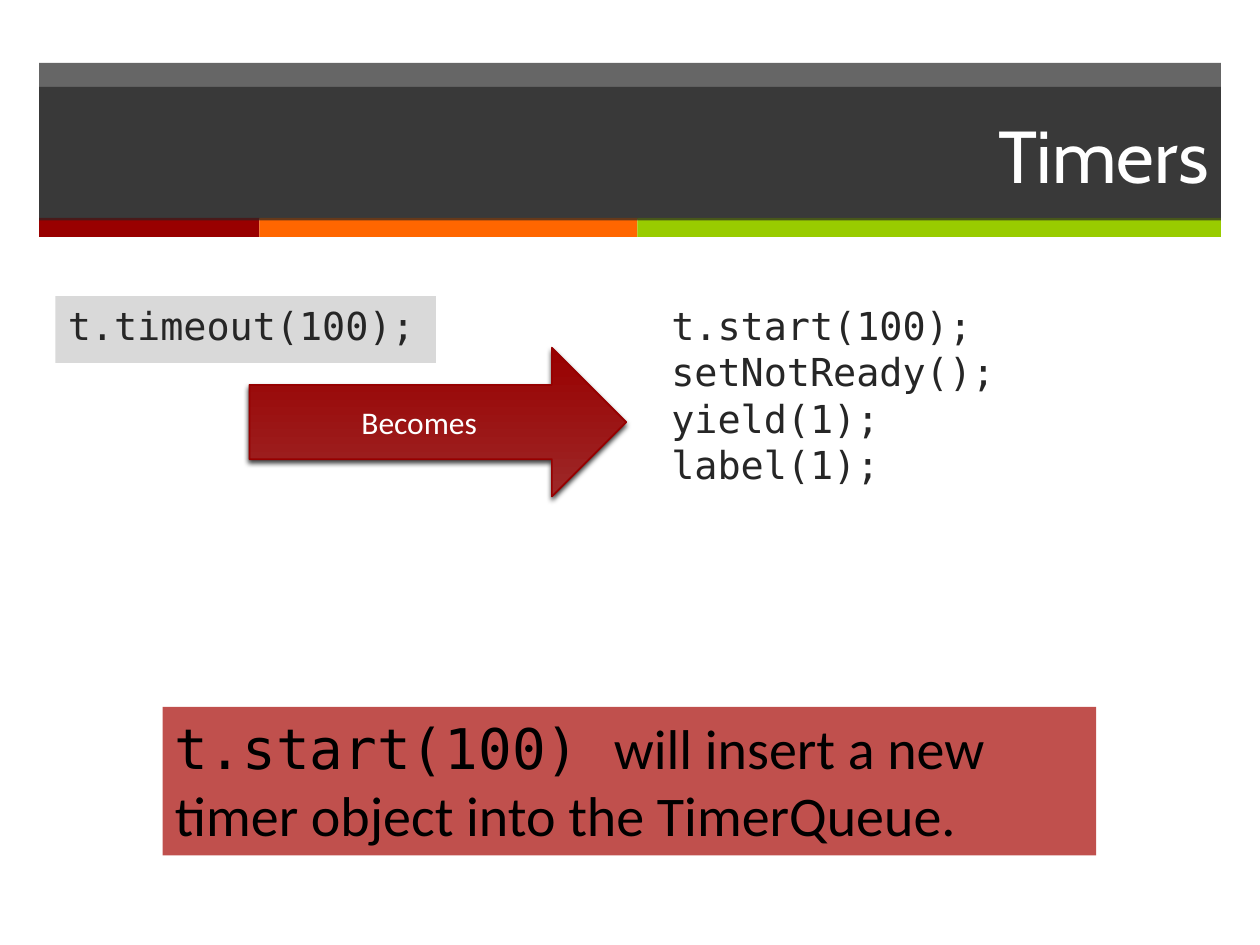
import pptx
import pptx.dml.color
import pptx.enum.shapes
import pptx.enum.text
import pptx.oxml
import pptx.oxml.ns
import pptx.util
from pptx.util import Inches

SHAPE = pptx.enum.shapes.MSO_SHAPE
ALIGN = pptx.enum.text.PP_ALIGN
ANCHOR = pptx.enum.text.MSO_ANCHOR


def color(code):
    return pptx.dml.color.RGBColor.from_string(code)


class Deck:
    sans = "Calibri"
    mono = "DejaVu Sans Mono"
    head = "Cabin"
    dark = "262626"
    white = "FFFFFF"

    def __init__(self, slide):
        self.slide = slide

    def box(self, left, top, width, height, fill=None, alpha=None,
            kind=SHAPE.RECTANGLE):
        shape = self.slide.shapes.add_shape(
            kind, Inches(left), Inches(top), Inches(width), Inches(height))
        shape.shadow.inherit = False
        shape.line.fill.background()
        if fill:
            shape.fill.solid()
            shape.fill.fore_color.rgb = color(fill)
        else:
            shape.fill.background()
        if alpha:
            props = shape._element.spPr
            node = props.find(".//" + pptx.oxml.ns.qn("a:srgbClr"))
            node.append(pptx.oxml.parse_xml(
                f'<a:alpha {pptx.oxml.ns.nsdecls("a")} val="{alpha * 1000}"/>'))
        return shape

    def label(self, shape, parts, size, ink, align=ALIGN.LEFT,
              anchor=ANCHOR.TOP):
        """Fill one paragraph with (text, font) parts; \\v breaks a line."""
        frame = shape.text_frame
        frame.word_wrap = True
        frame.vertical_anchor = anchor
        para = frame.paragraphs[0]
        para.alignment = align
        for text, font in parts:
            start = len(para.runs)
            if start:
                para.add_run().text = text
            else:
                para.text = text
            for run in para.runs[start:]:
                run.font.name = font
                run.font.size = pptx.util.Pt(size)
                run.font.color.rgb = color(ink)

    def arrow(self, left, top, width, height, text):
        shape = self.box(left, top, width, height, kind=SHAPE.RIGHT_ARROW)
        shape.fill.gradient()
        shape.fill.gradient_angle = 90
        for stop, code in zip(shape.fill.gradient_stops, ("9D2828", "990000")):
            stop.color.rgb = color(code)
        shape.line.color.rgb = color("960000")
        shape.line.width = pptx.util.Pt(1)
        effects = shape._element.spPr.find(pptx.oxml.ns.qn("a:effectLst"))
        effects.append(pptx.oxml.parse_xml(
            f'<a:outerShdw {pptx.oxml.ns.nsdecls("a")} blurRad="38100" '
            'dist="25400" dir="6600000" rotWithShape="0">'
            '<a:srgbClr val="000000"><a:alpha val="75000"/></a:srgbClr>'
            '</a:outerShdw>'))
        self.label(shape, [(text, self.sans)], 18, self.white,
                   ALIGN.CENTER, ANCHOR.MIDDLE)

    def banner(self, title):
        left, width = 0.31, 9.38
        self.box(left, 0.5, width, 1.24, self.dark, 70)
        edge = left
        for span, fill in ((1.75, "990000"), (3, "FF6600"), (4.63, "99CC00")):
            self.box(edge, 1.73, span, 0.15, fill)
            edge += span
        bar = self.box(left, 0.69, width, 1.06, self.dark, 70)
        self.label(bar, [(title, self.head)], 42, self.white,
                   ALIGN.RIGHT, ANCHOR.MIDDLE)

    def code(self, left, top, width, height, lines, fill=None):
        shape = self.box(left, top, width, height, fill)
        self.label(shape, [("\v".join(lines), self.mono)], 22, self.dark)

    def note(self, left, top, width, height, parts):
        shape = self.box(left, top, width, height, "C0504D")
        self.label(shape, parts, 32, "000000")


def main():
    show = pptx.Presentation()
    show.slide_width, show.slide_height = Inches(10), Inches(7.5)
    deck = Deck(show.slides.add_slide(show.slide_layouts[6]))
    deck.banner("Timers")
    deck.code(0.44, 2.35, 3.02, 0.53, ["t.timeout(100);"], "D9D9D9")
    deck.code(5.23, 2.35, 4.3, 2.37,
              ["t.start(100);", "setNotReady();", "yield(1);", "label(1);"])
    deck.arrow(1.98, 2.76, 2.99, 1.18, "Becomes")
    deck.note(1.29, 5.61, 7.41, 1.18, [
        ("t.start(100) ", deck.mono),
        ("will insert a new timer object into the TimerQueue.", deck.sans)])
    show.save("out.pptx")


if __name__ == "__main__":
    main()
